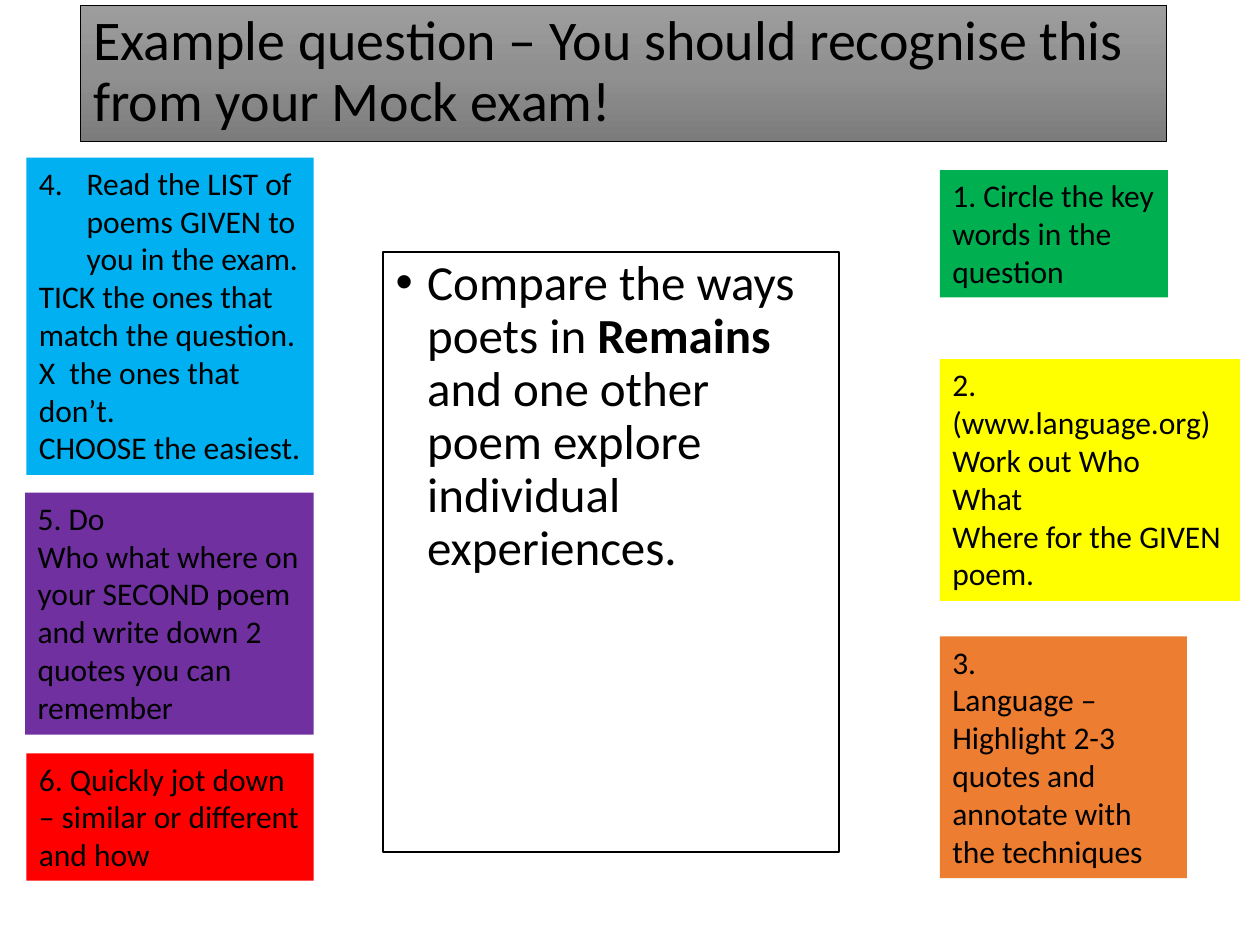
from copy import deepcopy
from lxml import etree
from pptx import Presentation
from pptx.dml.color import RGBColor
from pptx.enum.shapes import MSO_SHAPE
from pptx.enum.text import MSO_ANCHOR, MSO_AUTO_SIZE, PP_ALIGN
from pptx.oxml.ns import qn
from pptx.util import Inches, Pt

RECT = MSO_SHAPE.RECTANGLE
TOP, MID = MSO_ANCHOR.TOP, MSO_ANCHOR.MIDDLE
LEFT, FIXED = PP_ALIGN.LEFT, MSO_AUTO_SIZE.NONE
WIDE, HIGH = Inches(10), Inches(7.5)
COLS, ROWS = 100, 75
HEX = {
    "ink": "000000", "paper": "FFFFFF", "light": "9D9D9D", "grey": "909090",
    "dark": "7C7C7C", "green": "00B050", "yellow": "FFFF00", "orange": "ED7D31",
    "blue": "00B0F0", "purple": "7030A0", "red": "FF0000",
}
RIGHT_COL, LEFT_COL = 74.6, 2.1
STEPS = [
    ("yellow", (RIGHT_COL, 28.5, 23.8, 19.2),
     ["2.  (www.language.org)", "Work out Who", "What", "Where for the GIVEN poem."]),
    ("green", (RIGHT_COL, 13.5, 18.1, 10.1), ["1. Circle the key words in the question"]),
    ("blue", (LEFT_COL, 12.5, 22.8, 25.2),
     ["Read the LIST of poems GIVEN to you in the exam.",
      "TICK the ones that match the question.", "X  the ones that don’t.",
      "CHOOSE the easiest."]),
    ("purple", (2, 39.1, 22.9, 19.2),
     ["5. Do",
      "Who what where on your SECOND poem and write down 2 quotes you can remember"]),
    ("orange", (RIGHT_COL, 50.5, 19.6, 19.2),
     ["3.", "Language – Highlight 2-3 quotes and annotate with the techniques"]),
    ("red", (LEFT_COL, 59.8, 22.8, 10.1),
     ["6. Quickly jot down – similar or different and how"]),
]


def tint(name):
    """Return the named colour."""
    return RGBColor.from_string(HEX[name])


def apply(item, look):
    """Set each attribute held in a dict of format values."""
    for key, value in look.items():
        setattr(item, key, value)


def place(shape, box):
    """Put a shape in a box of grid columns and rows."""
    col, row, wide, high = box
    apply(shape, {
        "left": round(WIDE * col / COLS), "top": round(HIGH * row / ROWS),
        "width": round(WIDE * wide / COLS), "height": round(HIGH * high / ROWS),
    })


def edge(shape, width):
    """Outline a shape in ink."""
    shape.line.color.rgb = tint("ink")
    shape.line.width = Pt(width)


def mark(para, kind, indent, **attrs):
    """Give a paragraph a bullet or number with a hanging indent."""
    props = para._p.get_or_add_pPr()
    props.set("marL", str(Inches(indent)))
    props.set("indent", str(-Inches(indent)))
    etree.SubElement(props, qn(kind), attrs)


def style(para, size, lines=1.0):
    """Format one paragraph and its font."""
    apply(para, {"alignment": LEFT, "line_spacing": lines, "space_before": Pt(0)})
    for run in para.runs:
        apply(run.font, {"name": "Calibri", "size": Pt(size)})
        run.font.color.rgb = tint("ink")


def head(shape, box):
    """Build the shaded title bar."""
    place(shape, box)
    fill = shape.fill
    fill.gradient()
    fill.gradient_angle = 270
    first = fill.gradient_stops[0]._gs
    first.addnext(deepcopy(first))
    for stop, name, spot in zip(fill.gradient_stops, ("light", "grey", "dark"), (0, 0.5, 1)):
        stop.color.rgb = tint(name)
        stop.position = spot
    edge(shape, 0.5)
    frame = shape.text_frame
    frame.text = "Example question – You should recognise this from your Mock exam!"
    apply(frame, {"vertical_anchor": MID, "auto_size": FIXED, "word_wrap": True})
    style(frame.paragraphs[0], 32, 0.9)


def task(shape, box):
    """Build the framed exam question."""
    place(shape, box)
    shape.fill.solid()
    shape.fill.fore_color.rgb = tint("paper")
    edge(shape, 1)
    frame = shape.text_frame
    apply(frame, {"vertical_anchor": TOP, "auto_size": FIXED, "word_wrap": True})
    para = frame.paragraphs[0]
    mark(para, "a:buChar", 0.25, char="•")
    for text, bold in (("Compare the ways poets in", False), (" Remains", True),
                       (" and one other poem explore individual experiences.", False)):
        run = para.add_run()
        run.text = text
        run.font.bold = bold
    style(para, 28, 0.9)


def step(slide, name, box, lines):
    """Build one coloured step card."""
    card = slide.shapes.add_shape(RECT, 0, 0, 0, 0)
    place(card, box)
    card.shadow.inherit = False
    card.fill.solid()
    card.fill.fore_color.rgb = tint(name)
    card.line.fill.background()
    frame = card.text_frame
    frame.text = "\n".join(lines)
    apply(frame, {"vertical_anchor": TOP, "auto_size": FIXED, "word_wrap": True})
    if name == "blue":
        mark(frame.paragraphs[0], "a:buAutoNum", 0.38, type="arabicPeriod", startAt="4")
    for para in frame.paragraphs:
        style(para, 18)


def main():
    """Build and save the slide."""
    deck = Presentation()
    apply(deck, {"slide_width": WIDE, "slide_height": HIGH})
    slide = deck.slides.add_slide(deck.slide_layouts[1])
    title, body = slide.placeholders
    head(title, (6.4, 0.4, 86.2, 10.8))
    for name, box, lines in STEPS:
        step(slide, name, box, lines)
    task(body, (30.4, 20, 36.2, 47.6))
    deck.save("out.pptx")


if __name__ == "__main__":
    main()
